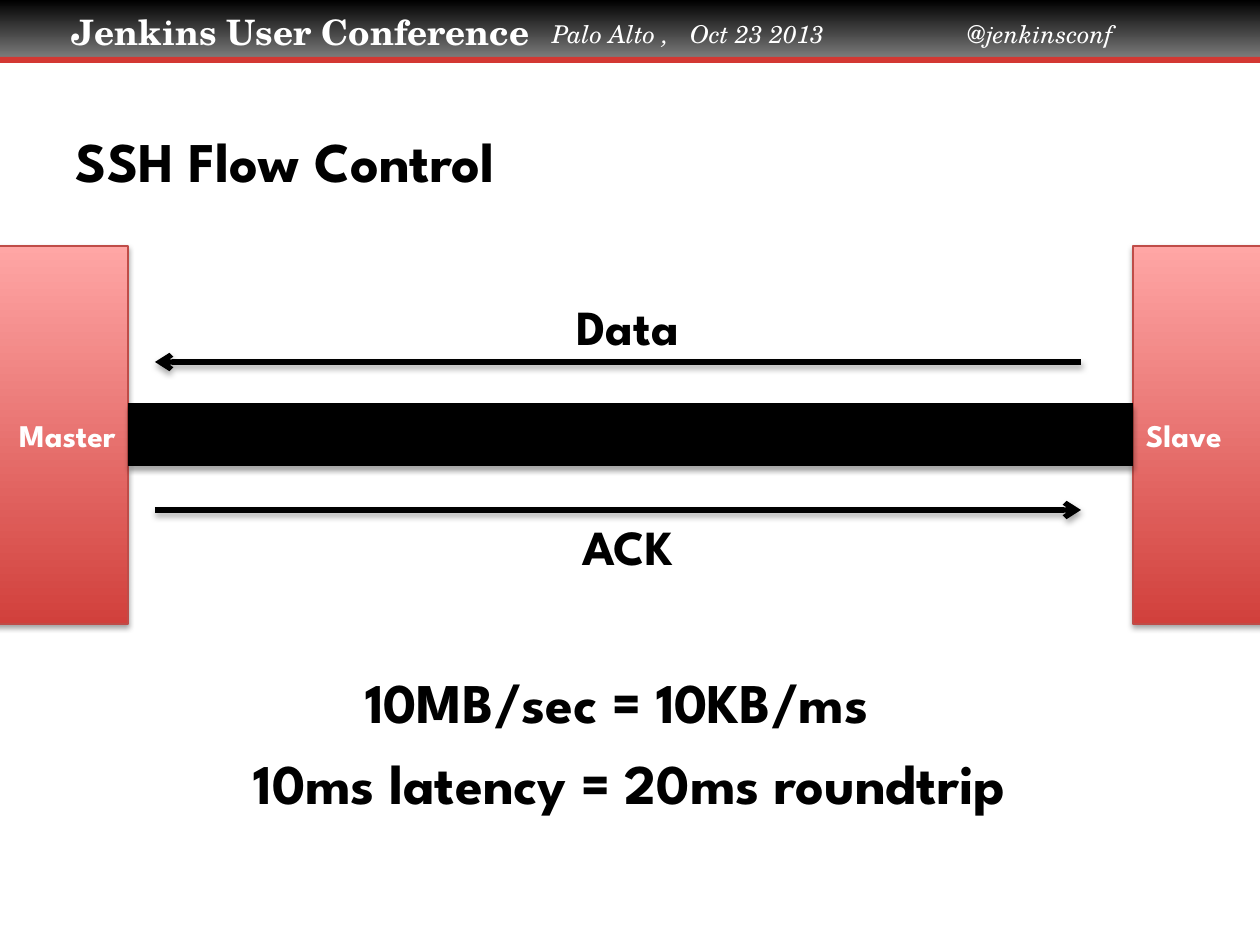
"""Builds the SSH flow control slide."""
import pptx
import pptx.dml.color
import pptx.enum.shapes
import pptx.enum.text
import pptx.oxml
import pptx.oxml.ns
import pptx.util

COLORS = {
    "black": "000000", "gray": "808080", "white": "FFFFFF", "stripe": "D33833",
    "light": "FFA6A5", "dark": "D1403C", "edge": "BF4C48",
}
ALIGN = pptx.enum.text.PP_ALIGN
ANCHOR = pptx.enum.text.MSO_ANCHOR
NS = pptx.oxml.ns.nsdecls("a")


def px(length):
    return pptx.util.Emu(round(length * 914400 / 126))


def rgb(name):
    return pptx.dml.color.RGBColor.from_string(COLORS[name])


def write(shape, text, size, color="black", font="League Spartan", bold=True, italic=False,
          align=ALIGN.LEFT, anchor=ANCHOR.TOP, left=13, top=6, tabs=()):
    frame = shape.text_frame
    frame.word_wrap = True
    frame.vertical_anchor = anchor
    frame.margin_left, frame.margin_top = px(left), px(top)
    paragraph = frame.paragraphs[0]
    paragraph.alignment = align
    if tabs:
        stops = "".join(f'<a:tab pos="{px(tab)}" algn="l"/>' for tab in tabs)
        paragraph._p.get_or_add_pPr().append(
            pptx.oxml.parse_xml(f"<a:tabLst {NS}>{stops}</a:tabLst>"))
    run = paragraph.add_run()
    run.text = text
    run.font.name, run.font.size = font, pptx.util.Pt(size)
    run.font.bold, run.font.italic = bold, italic
    run.font.color.rgb = rgb(color)


class Deck:
    def __init__(self):
        self.deck = pptx.Presentation()
        self.deck.slide_width, self.deck.slide_height = px(1260), px(945)
        self.slide = self.deck.slides.add_slide(self.deck.slide_layouts[6])

    def shade(self, shape):
        shape._element.spPr.append(pptx.oxml.parse_xml(
            f'<a:effectLst {NS}><a:outerShdw blurRad="40000" dist="23000" dir="5400000" '
            f'rotWithShape="0"><a:srgbClr val="{COLORS["black"]}"><a:alpha val="35000"/>'
            '</a:srgbClr></a:outerShdw></a:effectLst>'))

    def box(self, x, y, w, h, *fills, edge=None):
        shape = self.slide.shapes.add_shape(
            pptx.enum.shapes.MSO_SHAPE.RECTANGLE, px(x), px(y), px(w), px(h))
        if len(fills) == 1:
            shape.fill.solid()
            shape.fill.fore_color.rgb = rgb(fills[0])
        else:
            shape.fill.gradient()
            shape.fill.gradient_angle = 270
            for stop, fill in zip(shape.fill.gradient_stops, fills):
                stop.color.rgb = rgb(fill)
        if edge:
            shape.line.color.rgb = rgb(edge)
            shape.line.width = pptx.util.Pt(0.75)
            self.shade(shape)
        else:
            shape.line.fill.background()
            shape.shadow.inherit = False
        return shape

    def text(self, x, y, w, h, text, size, **style):
        write(self.slide.shapes.add_textbox(px(x), px(y), px(w), px(h)), text, size, **style)

    def line(self, x1, x2, y, width, arrow=False):
        line = self.slide.shapes.add_connector(
            pptx.enum.shapes.MSO_CONNECTOR.STRAIGHT, px(x1), px(y), px(x2), px(y))
        line.line.color.rgb = rgb("black")
        line.line.width = pptx.util.Pt(width)
        if arrow:
            line.line._get_or_add_ln().append(
                pptx.oxml.parse_xml(f'<a:tailEnd {NS} type="arrow"/>'))
        self.shade(line)
        return line


def main():
    deck = Deck()
    header = deck.box(0, 0, 1260, 60, "black", "gray")
    write(header, "Jenkins User Conference", 20, color="white", font="TeX Gyre Schola",
          left=72, top=11)
    deck.box(0, 57, 1260, 6, "stripe")
    deck.text(509, 13, 659, 43, "Palo Alto ,\tOct 23 2013\t@jenkinsconf", 14, color="white",
              font="TeX Gyre Schola", bold=False, italic=True, left=43, tabs=(138, 415))
    deck.text(63, 81, 1134, 158, "SSH Flow Control", 32, anchor=ANCHOR.MIDDLE)

    master, slave = (deck.box(x, 246, 378, 378, "light", "dark", edge="edge")
                     for x in (-250, 1133))
    write(master, "Master", 18, color="white", align=ALIGN.RIGHT, anchor=ANCHOR.MIDDLE)
    write(slave, "Slave", 18, color="white", anchor=ANCHOR.MIDDLE)
    channel = deck.line(128, 1133, 435, 36)
    channel.begin_connect(master, 3)
    channel.end_connect(slave, 1)

    for label, start, end, y, label_y in (("Data", 1081, 155, 362, 290),
                                          ("ACK", 155, 1081, 510, 510)):
        deck.line(start, end, y, 3, arrow=True)
        deck.text(457, label_y, 341, 72, label, 28, align=ALIGN.CENTER)

    deck.text(239, 661, 756, 81, "10MB/sec = 10KB/ms", 32, align=ALIGN.CENTER)
    deck.text(0, 742, 1260, 81, "10ms latency = 20ms roundtrip", 32, align=ALIGN.CENTER)
    deck.deck.save("out.pptx")


if __name__ == "__main__":
    main()
